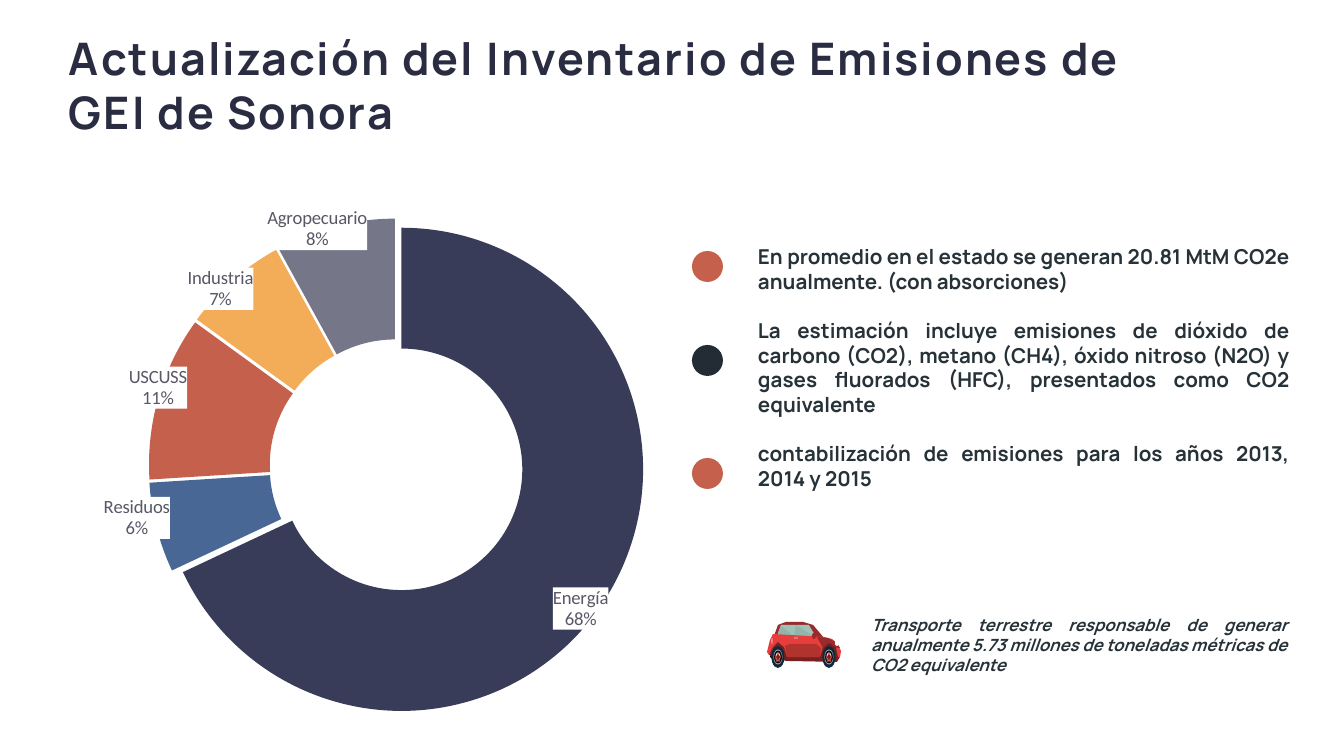
"""Builds a slide on the greenhouse gas emissions inventory of Sonora."""
import copy
import dataclasses

import lxml.etree
import pptx
import pptx.chart.data
import pptx.dml.color
import pptx.enum.chart
import pptx.enum.shapes
import pptx.enum.text
import pptx.oxml
import pptx.oxml.ns
import pptx.util

PX = 914400 / 134.4
SHAPES = pptx.enum.shapes.MSO_SHAPE
ALIGN = pptx.enum.text.PP_ALIGN
qn = pptx.oxml.ns.qn


@dataclasses.dataclass(frozen=True)
class Theme:
    heading_font: str = "Manrope"
    chart_font: str = "Calibri"
    title_size: int = 24
    body_size: int = 11
    note_size: int = 9
    label_size: int = 10
    title: str = "2A2D42"
    body: str = "263238"
    label: str = "585867"
    white: str = "FFFFFF"
    dark: str = "232C34"
    coral: str = "C4604C"
    energy: str = "383C58"
    waste: str = "486794"
    industry: str = "F3AC58"
    farming: str = "767689"
    tyre: str = "0F293D"
    black: str = "070308"
    rim: str = "B0B0B1"
    hubcap: str = "E2E2E1"
    spoke: str = "C0342D"
    red: str = "E83D3D"
    door: str = "B2322E"
    roof: str = "9A2B2B"
    maroon: str = "762021"
    glass: str = "9EC1B8"
    glass_shade: str = "91B5AB"
    handle: str = "CA7F7D"


def px(length):
    return round(length * PX)


def color(value):
    return pptx.dml.color.RGBColor.from_string(value)


class SlideBuilder:
    """Holds the theme and the current slide, and adds elements to it."""

    def __init__(self, slide, theme):
        self.slide = slide
        self.theme = theme

    def paint(self, shape, fill):
        shape.shadow.inherit = False
        shape.fill.solid()
        shape.fill.fore_color.rgb = color(fill)
        shape.line.fill.background()

    def shape(self, kind, left, top, width, height, fill):
        shape = self.slide.shapes.add_shape(kind, px(left), px(top), px(width), px(height))
        self.paint(shape, fill)

    def centered(self, kind, x, y, width, height, fill):
        self.shape(kind, x - width / 2, y - height / 2, width, height, fill)

    def polygon(self, points, fill):
        builder = self.slide.shapes.build_freeform(*points[0], scale=PX)
        builder.add_line_segments(points[1:], close=True)
        self.paint(builder.convert_to_shape(), fill)

    def text(self, box, paragraphs, size, fill, insets=(13, 13), align=ALIGN.LEFT,
             anchor=pptx.enum.text.MSO_ANCHOR.TOP, gap=0, italic=False, spacing=0):
        frame = self.slide.shapes.add_textbox(*map(px, box)).text_frame
        frame.word_wrap = True
        frame.vertical_anchor = anchor
        frame.margin_left = frame.margin_right = px(13)
        frame.margin_top, frame.margin_bottom = map(px, insets)
        frame.text = "\n".join(paragraphs)
        for paragraph in frame.paragraphs:
            paragraph.alignment = align
            paragraph.space_after = pptx.util.Pt(gap)
            for run in paragraph.runs:
                font = run.font
                font.name, font.size = self.theme.heading_font, pptx.util.Pt(size)
                font.bold, font.italic = True, italic
                font.color.rgb = color(fill)
                if spacing:
                    font._element.set("spc", str(spacing))

    def chart_xml(self, markup):
        declarations = pptx.oxml.ns.nsdecls("c", "a")
        return pptx.oxml.parse_xml(markup.replace(">", f" {declarations}>", 1))

    def doughnut(self, box, sectors):
        data = pptx.chart.data.CategoryChartData()
        data.categories = [name for name, *_ in sectors]
        data.add_series("Series 1", [value for _, value, *_ in sectors])
        chart = self.slide.shapes.add_chart(
            pptx.enum.chart.XL_CHART_TYPE.DOUGHNUT, *map(px, box), data).chart
        chart.has_legend = chart.has_title = False
        chart.font.name = self.theme.chart_font
        chart.font.size = pptx.util.Pt(self.theme.label_size)
        chart.font.color.rgb = color(self.theme.label)
        plot = chart.plots[0]
        plot.vary_by_categories = True
        series = plot.series[0]
        for index, (_, _, fill, _) in enumerate(sectors):
            point_fill = series.points[index].format.fill
            point_fill.solid()
            point_fill.fore_color.rgb = color(fill)
        series._element.find(qn("c:tx")).addnext(
            self.chart_xml('<c:explosion val="5"></c:explosion>'))
        self.plot_layout(plot, 0.12, 0.02, 0.76, 0.94)
        self.sector_labels(series.data_labels, [offset for *_, offset in sectors])

    def plot_layout(self, plot, x, y, width, height):
        area = plot._element.getparent()
        for old in area.findall(qn("c:layout")):
            area.remove(old)
        area.insert(0, self.chart_xml(
            '<c:layout><c:manualLayout><c:layoutTarget val="inner"/>'
            '<c:xMode val="edge"/><c:yMode val="edge"/>'
            f'<c:x val="{x}"/><c:y val="{y}"/><c:w val="{width}"/><c:h val="{height}"/>'
            '</c:manualLayout></c:layout>'))

    def sector_labels(self, labels, offsets):
        labels.show_value = False
        labels.show_percentage = labels.show_category_name = True
        labels.number_format, labels.number_format_is_linked = "0%", False
        labels.font.name = self.theme.chart_font
        labels.font.size = pptx.util.Pt(self.theme.label_size)
        labels.font.color.rgb = color(self.theme.label)
        root = labels._element
        root.find(qn("c:txPr")).addprevious(self.chart_xml(
            f'<c:spPr><a:solidFill><a:srgbClr val="{self.theme.white}"/></a:solidFill></c:spPr>'))
        flags = [child for child in root if child.tag.split("}")[1].startswith("show")
                 and child.tag != qn("c:showLeaderLines")]
        flags[-1].addnext(self.chart_xml("<c:separator>\n</c:separator>"))
        shared = [child for child in root if child.tag != qn("c:showLeaderLines")]
        for index, (x, y) in enumerate(offsets):
            label = self.chart_xml(
                f'<c:dLbl><c:idx val="{index}"/><c:layout><c:manualLayout>'
                f'<c:x val="{x}"/><c:y val="{y}"/></c:manualLayout></c:layout></c:dLbl>')
            label.extend(copy.deepcopy(child) for child in shared)
            root.insert(index, label)

    def car(self):
        theme = self.theme
        for fill, points in (
            (theme.black, [(775, 638), (770, 657), (773, 660), (837, 660), (836, 644), (825, 638)]),
            (theme.roof, [(774, 636), (778, 625), (786, 622), (803, 622), (813, 625), (824, 638)]),
            (theme.glass, [(777, 636), (781, 625), (809, 625), (816, 637), (796, 638)]),
            (theme.glass_shade, [(777, 636), (781, 626), (794, 636), (796, 625), (815, 637), (797, 640)]),
            (theme.maroon, [(769, 655), (773, 642), (837, 642), (840, 657), (837, 662), (786, 661)]),
            (theme.red, [(773, 634), (824, 637), (832, 639), (837, 643), (841, 651), (840, 657),
                         (838, 657), (836, 647), (829, 642), (823, 647), (820, 657), (787, 657),
                         (784, 647), (778, 642), (773, 647), (769, 655), (767, 652), (770, 640)]),
            (theme.door, [(785, 646), (790, 644), (816, 644), (821, 648), (820, 657), (787, 657)]),
            (theme.roof, [(817, 637), (828, 638), (837, 643), (840, 648), (837, 648), (829, 642), (823, 648)]),
        ):
            self.polygon(points, fill)
        for x in (778, 829):
            for kind, width, height, fill in (
                (SHAPES.OVAL, 13, 22, theme.tyre), (SHAPES.OVAL, 9, 15, theme.rim),
                (SHAPES.OVAL, 8, 13, theme.black), (SHAPES.OVAL, 5, 9, theme.hubcap),
                (SHAPES.STAR_5_POINT, 8, 12, theme.spoke), (SHAPES.OVAL, 3, 4, theme.maroon),
            ):
                self.centered(kind, x, 657, width, height, fill)
        self.centered(SHAPES.OVAL, 837, 643, 4, 6, theme.white)
        self.centered(SHAPES.OVAL, 772, 641, 1, 6, theme.hubcap)
        self.centered(SHAPES.OVAL, 814, 636, 4, 6, theme.roof)
        self.centered(SHAPES.ROUNDED_RECTANGLE, 796, 638, 4, 2, theme.handle)


def main():
    presentation = pptx.Presentation()
    presentation.slide_width, presentation.slide_height = px(1344), px(756)
    theme = Theme()
    builder = SlideBuilder(presentation.slides.add_slide(presentation.slide_layouts[6]), theme)
    builder.text((56, 24, 1156, 122), ["Actualización del Inventario de Emisiones de GEI de Sonora"],
                 theme.title_size, theme.title, insets=(7, 7), spacing=110)
    builder.doughnut((70, 208, 653, 527), [
        ("Energía", 68, theme.energy, (0.04, 0.08)),
        ("Residuos", 6, theme.waste, (-0.12, 0.01)),
        ("USCUSS", 11, theme.coral, (-0.09, -0.05)),
        ("Industria", 7, theme.industry, (-0.08, -0.07)),
        ("Agropecuario", 8, theme.farming, (-0.05, -0.11)),
    ])
    builder.car()
    builder.text((745, 218, 558, 348), [
        "En promedio en el estado se generan 20.81 MtM CO2e anualmente. (con absorciones)",
        "La estimación incluye emisiones de dióxido de carbono (CO2), metano (CH4), óxido nitroso "
        "(N2O) y gases fluorados (HFC), presentados como CO2 equivalente",
        "contabilización de emisiones para los años 2013, 2014 y 2015",
    ], theme.body_size, theme.body, insets=(26, 13), align=ALIGN.JUSTIFY, gap=13.2)
    builder.text((858, 566, 442, 158), [
        "Transporte terrestre responsable de generar anualmente 5.73 millones de toneladas "
        "métricas de CO2 equivalente",
    ], theme.note_size, theme.body, align=ALIGN.JUSTIFY,
        anchor=pptx.enum.text.MSO_ANCHOR.MIDDLE, italic=True)
    for top, fill in ((251, theme.coral), (345, theme.dark), (458, theme.coral)):
        builder.shape(SHAPES.OVAL, 692, top, 31, 31, fill)
    presentation.save("out.pptx")


if __name__ == "__main__":
    main()
